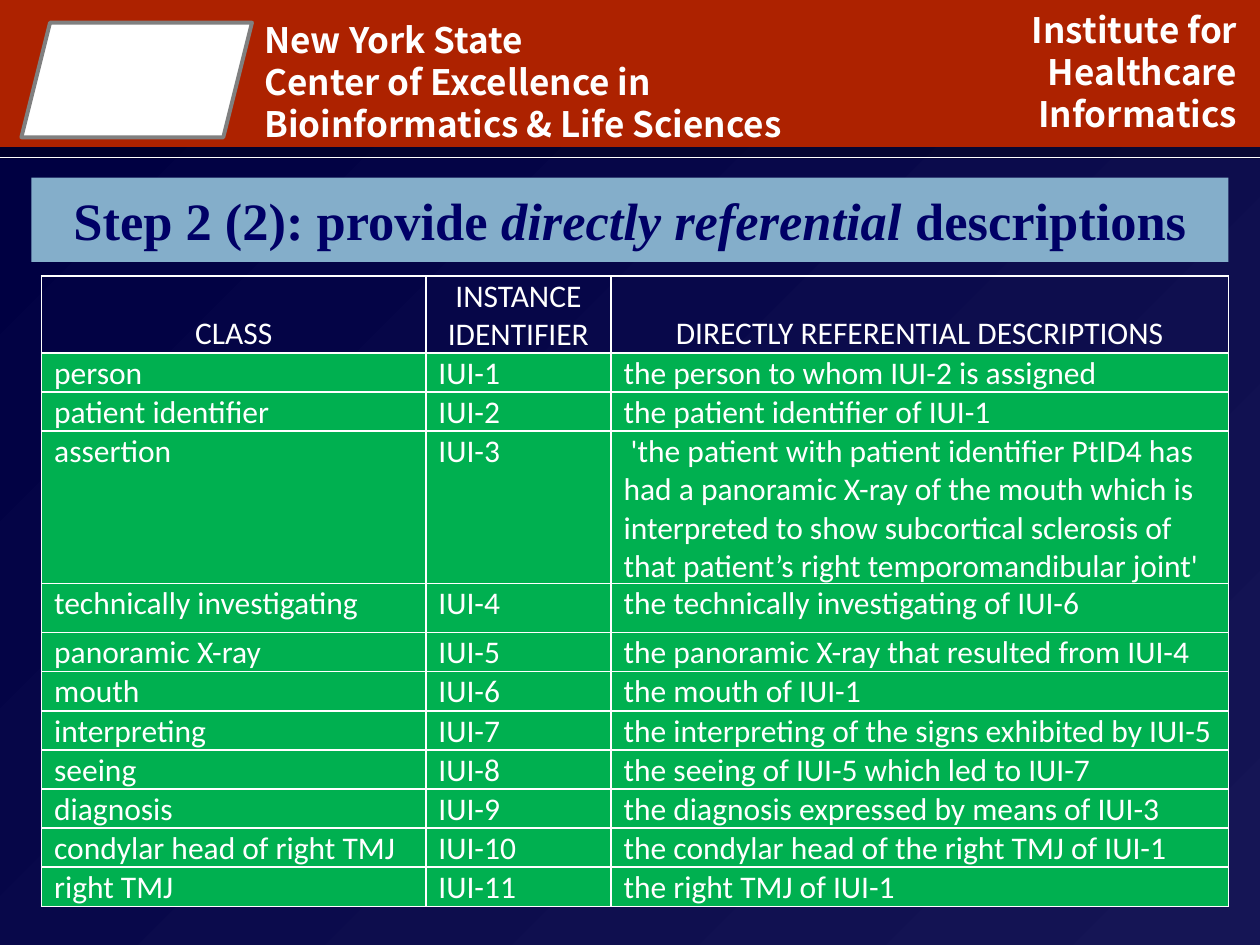
from lxml.etree import SubElement
from pptx import Presentation
from pptx.dml.color import RGBColor
from pptx.enum.shapes import MSO_CONNECTOR, MSO_SHAPE
from pptx.enum.text import MSO_ANCHOR as Anchor, PP_ALIGN as Align
from pptx.oxml.ns import qn
from pptx.util import Inches, Pt

COLORS = {"red": "FF3300", "shade": "000000", "navy": "000042", "indigo": "151555",
          "white": "FFFFFF", "gray": "808080", "title_fill": "84AECA",
          "title_text": "000066", "green": "00B050"}
HEADER_FONT, TITLE_FONT, TABLE_FONT = "Noto Sans CJK KR", "Times New Roman", "Calibri"

INSTITUTE = ["Institute for", "Healthcare", "Informatics"]
CENTER = ["New York State", "Center of Excellence in Bioinformatics & Life Sciences"]
TITLE = [("Step 2 (2): provide ", False), ("directly referential ", True),
         ("descriptions", False)]

TABLE_HEADER = ("CLASS", "INSTANCE IDENTIFIER", "DIRECTLY REFERENTIAL DESCRIPTIONS")
INSTANCES = [  # class, directly referential description
    ("person", "the person to whom IUI-2 is assigned"),
    ("patient identifier", "the patient identifier of IUI-1"),
    ("assertion", " 'the patient with patient identifier PtID4 has had a panoramic X-ray "
                  "of the mouth which is interpreted to show subcortical sclerosis of "
                  "that patient’s right temporomandibular joint'"),
    ("technically investigating", "the technically investigating of IUI-6"),
    ("panoramic X-ray", "the panoramic X-ray that resulted from IUI-4"),
    ("mouth", "the mouth of IUI-1"),
    ("interpreting", "the interpreting of the signs exhibited by IUI-5"),
    ("seeing", "the seeing of IUI-5 which led to IUI-7"),
    ("diagnosis", "the diagnosis expressed by means of IUI-3"),
    ("condylar head of right TMJ", "the condylar head of the right TMJ of IUI-1"),
    ("right TMJ", "the right TMJ of IUI-1"),
]
COLUMN_WIDTHS = (3.05, 1.47, 4.9)
ROW_HEIGHT = 0.31
SPECIAL_HEIGHTS = {0: 0.61, 3: 1.21, 4: 0.39}


def color(name):
    return RGBColor.from_string(COLORS[name])


def set_font(paragraph, name, size, color_name, bold=False):
    font = paragraph.font
    font.name, font.size, font.bold = name, Pt(size), bold
    font.color.rgb = color(color_name)


def add_box(slide, kind, left, top, width, height, fill=None):
    shape = slide.shapes.add_shape(kind, Inches(left), Inches(top),
                                   Inches(width), Inches(height))
    shape.shadow.inherit = False
    shape.line.fill.background()
    if fill:
        shape.fill.solid()
        shape.fill.fore_color.rgb = color(fill)
    return shape


def add_backdrop(slide):
    slide.background.fill.solid()
    slide.background.fill.fore_color.rgb = color("red")

    body = add_box(slide, MSO_SHAPE.RECTANGLE, 0, 1.17, 10, 6.33)
    body.fill.gradient()
    body.fill.gradient_angle = 315
    for stop, position, name in zip(body.fill.gradient_stops, (0, 1), ("navy", "indigo")):
        stop.position = position
        stop.color.rgb = color(name)

    band = add_box(slide, MSO_SHAPE.RECTANGLE, 0, 0, 10, 1.26, "shade")
    band_color = band.fill._xPr.find(".//" + qn("a:srgbClr"))
    SubElement(band_color, qn("a:alpha"), val="32000")


def add_header_text(slide, lines, left, top, width, height, align, inset_x, inset_y):
    box = slide.shapes.add_textbox(Inches(left), Inches(top), Inches(width), Inches(height))
    frame = box.text_frame
    frame.word_wrap = True
    frame.margin_left = frame.margin_right = Inches(inset_x)
    frame.margin_top = frame.margin_bottom = Inches(inset_y)
    frame.text = "\n".join(lines)
    for paragraph in frame.paragraphs:
        paragraph.alignment = align
        paragraph.line_spacing = Pt(24)
        set_font(paragraph, HEADER_FONT, 20, "white", bold=True)


def add_emblem(slide):
    emblem = add_box(slide, MSO_SHAPE.PARALLELOGRAM, 0.17, 0.18, 1.83, 0.91, "white")
    emblem.line.color.rgb = color("gray")
    emblem.line.width = Pt(2.25)


def add_rule(slide):
    rule = slide.shapes.add_connector(MSO_CONNECTOR.STRAIGHT, Inches(0), Inches(1.25),
                                      Inches(10), Inches(1.25))
    rule.line.color.rgb = color("white")
    rule.line.width = Pt(0.75)
    SubElement(rule._element.spPr, qn("a:effectLst"))


def add_title(slide):
    title = add_box(slide, MSO_SHAPE.RECTANGLE, 0.25, 1.41, 9.5, 0.67, "title_fill")
    title.text_frame.vertical_anchor = Anchor.MIDDLE
    paragraph = title.text_frame.paragraphs[0]
    paragraph.alignment = Align.CENTER
    set_font(paragraph, TITLE_FONT, 30, "title_text", bold=True)
    for text, italic in TITLE:
        run = paragraph.add_run()
        run.text = text
        run.font.italic = italic


def add_borders(cell):
    properties = cell._tc.get_or_add_tcPr()
    for index, side in enumerate(("lnL", "lnR", "lnT", "lnB")):
        line = properties.makeelement(qn("a:" + side), {"w": str(Pt(1))})
        fill = SubElement(line, qn("a:solidFill"))
        SubElement(fill, qn("a:srgbClr"), val=COLORS["white"])
        properties.insert(index, line)  # borders come before the cell fill


def add_instance_table(slide):
    rows = [TABLE_HEADER] + [(name, f"IUI-{number}", description)
                             for number, (name, description) in enumerate(INSTANCES, 1)]
    heights = [SPECIAL_HEIGHTS.get(index, ROW_HEIGHT) for index in range(len(rows))]
    table = slide.shapes.add_table(len(rows), len(COLUMN_WIDTHS), Inches(0.33), Inches(2.19),
                                   Inches(sum(COLUMN_WIDTHS)), Inches(sum(heights))).table
    table.first_row = table.horz_banding = False
    for column, width in zip(table.columns, COLUMN_WIDTHS):
        column.width = Inches(width)
    for row_index, (values, height) in enumerate(zip(rows, heights)):
        table.rows[row_index].height = Inches(height)
        is_header = row_index == 0
        for column_index, value in enumerate(values):
            cell = table.cell(row_index, column_index)
            cell.text = value
            cell.margin_left = cell.margin_right = Inches(0.1)
            cell.margin_top, cell.margin_bottom = Inches(0.01), 0
            cell.vertical_anchor = Anchor.BOTTOM if is_header else Anchor.TOP
            paragraph = cell.text_frame.paragraphs[0]
            paragraph.alignment = Align.CENTER if is_header else Align.LEFT
            set_font(paragraph, TABLE_FONT, 18, "white")
            if is_header:
                cell.fill.background()
            else:
                cell.fill.solid()
                cell.fill.fore_color.rgb = color("green")
            add_borders(cell)


def main():
    presentation = Presentation()
    presentation.slide_width, presentation.slide_height = Inches(10), Inches(7.5)
    slide = presentation.slides.add_slide(presentation.slide_layouts[6])
    add_backdrop(slide)
    add_header_text(slide, INSTITUTE, 8.1, 0.07, 1.72, 1.14, Align.RIGHT, 0, 0)
    add_header_text(slide, CENTER, 2, 0.1, 4.58, 1.2, Align.LEFT, 0.1, 0.05)
    add_emblem(slide)
    add_rule(slide)
    add_title(slide)
    add_instance_table(slide)
    presentation.save("out.pptx")


if __name__ == "__main__":
    main()
